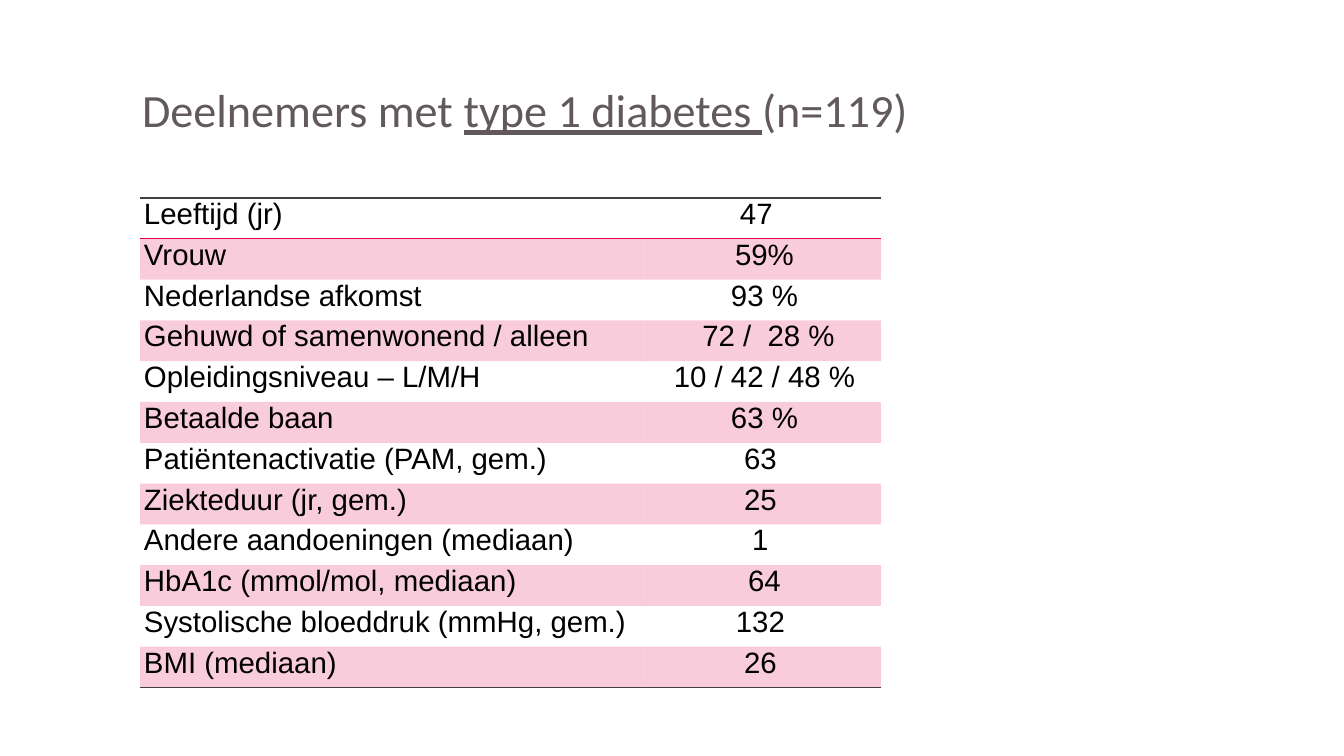
"""Build a slide with a table of participants with type 1 diabetes."""
import lxml.etree
import pptx
import pptx.dml.color
import pptx.enum.text
import pptx.oxml.ns
import pptx.util

TITLE = [("Deelnemers met ", False), ("type 1 diabetes ", True), ("(n=119)", False)]
ROWS = [
    ("Leeftijd (jr)", "47  "),
    ("Vrouw", "59%"),
    ("Nederlandse afkomst", "93 %"),
    ("Gehuwd of samenwonend / alleen", " 72 /  28 %"),
    ("Opleidingsniveau – L/M/H", "10 / 42 / 48 %"),
    ("Betaalde baan", "63 %"),
    ("Patiëntenactivatie (PAM, gem.)", "63 "),
    ("Ziekteduur (jr, gem.)", "25 "),
    ("Andere aandoeningen (mediaan)", "1 "),
    ("HbA1c (mmol/mol, mediaan)", " 64 "),
    ("Systolische bloeddruk (mmHg, gem.)", "132 "),
    ("BMI (mediaan)", "26 "),
]
SLIDE_SIZE = (1344, 756)
TITLE_BOX = (132, 40, 1212, 146)
TABLE_BOX = (140, 198, 741, 490)
COLUMN_WIDTHS = (508, 233)
CELL_MARGIN = 4
PINK, DARK, BLACK, GREY = "E50051", "404040", "000000", "61595D"
BAND_ALPHA = 20
PLAIN_TABLE_STYLE = "{2D5ABB26-0587-4C30-8999-92F81FD0307C}"


def px(length):
    return pptx.util.Emu(round(length * 914400 / 100.8))


def rgb(code):
    return pptx.dml.color.RGBColor.from_string(code)


def add_span(para, text, font, size, color):
    span = para.add_run()
    span.text = text
    span.font.name = font
    span.font.size = pptx.util.Pt(size)
    span.font.color.rgb = rgb(color)
    return span


def add_element(parent, tag, **attributes):
    return lxml.etree.SubElement(parent, pptx.oxml.ns.qn(tag), attributes)


def set_borders(cell, borders):
    properties = cell._tc.get_or_add_tcPr()
    for position, (tag, color) in enumerate(borders):
        line = add_element(properties, tag, w=str(pptx.util.Pt(1)))
        add_element(add_element(line, "a:solidFill"), "a:srgbClr", val=color)
        properties.insert(position, line)


def shade(cell):
    cell.fill.solid()
    cell.fill.fore_color.rgb = rgb(PINK)
    color = cell._tc.tcPr.find(".//" + pptx.oxml.ns.qn("a:srgbClr"))
    add_element(color, "a:alpha", val=str(BAND_ALPHA * 1000))


def add_title(page):
    box = page.shapes.title
    box.left, box.top, box.width, box.height = map(px, TITLE_BOX)
    box.text_frame.vertical_anchor = pptx.enum.text.MSO_ANCHOR.MIDDLE
    para = box.text_frame.paragraphs[0]
    para.alignment = pptx.enum.text.PP_ALIGN.LEFT
    para.line_spacing = 0.9
    for text, underlined in TITLE:
        add_span(para, text, "Calibri", 33, GREY).font.underline = underlined


def add_participants(page):
    frame = page.shapes.add_table(len(ROWS), len(COLUMN_WIDTHS), *map(px, TABLE_BOX))
    table = frame.table
    table.first_row = table.horz_banding = False
    table._tbl.tblPr.find(pptx.oxml.ns.qn("a:tableStyleId")).text = PLAIN_TABLE_STYLE
    for column, width in zip(table.columns, COLUMN_WIDTHS):
        column.width = px(width)
    aligns = (pptx.enum.text.PP_ALIGN.LEFT, pptx.enum.text.PP_ALIGN.CENTER)
    borders = {0: [("a:lnT", DARK), ("a:lnB", PINK)], len(ROWS) - 1: [("a:lnB", DARK)]}
    for row, texts in enumerate(ROWS):
        for column, text in enumerate(texts):
            cell = table.cell(row, column)
            cell.margin_left = cell.margin_right = px(CELL_MARGIN)
            cell.margin_top = cell.margin_bottom = 0
            para = cell.text_frame.paragraphs[0]
            para.alignment = aligns[column]
            add_span(para, text, "Arial", 21, BLACK)
            if row % 2:
                shade(cell)
            else:
                cell.fill.background()
            set_borders(cell, borders.get(row, []))


def main():
    deck = pptx.Presentation()
    deck.slide_width, deck.slide_height = map(px, SLIDE_SIZE)
    page = deck.slides.add_slide(deck.slide_layouts[5])
    add_title(page)
    add_participants(page)
    deck.save("out.pptx")


if __name__ == "__main__":
    main()
